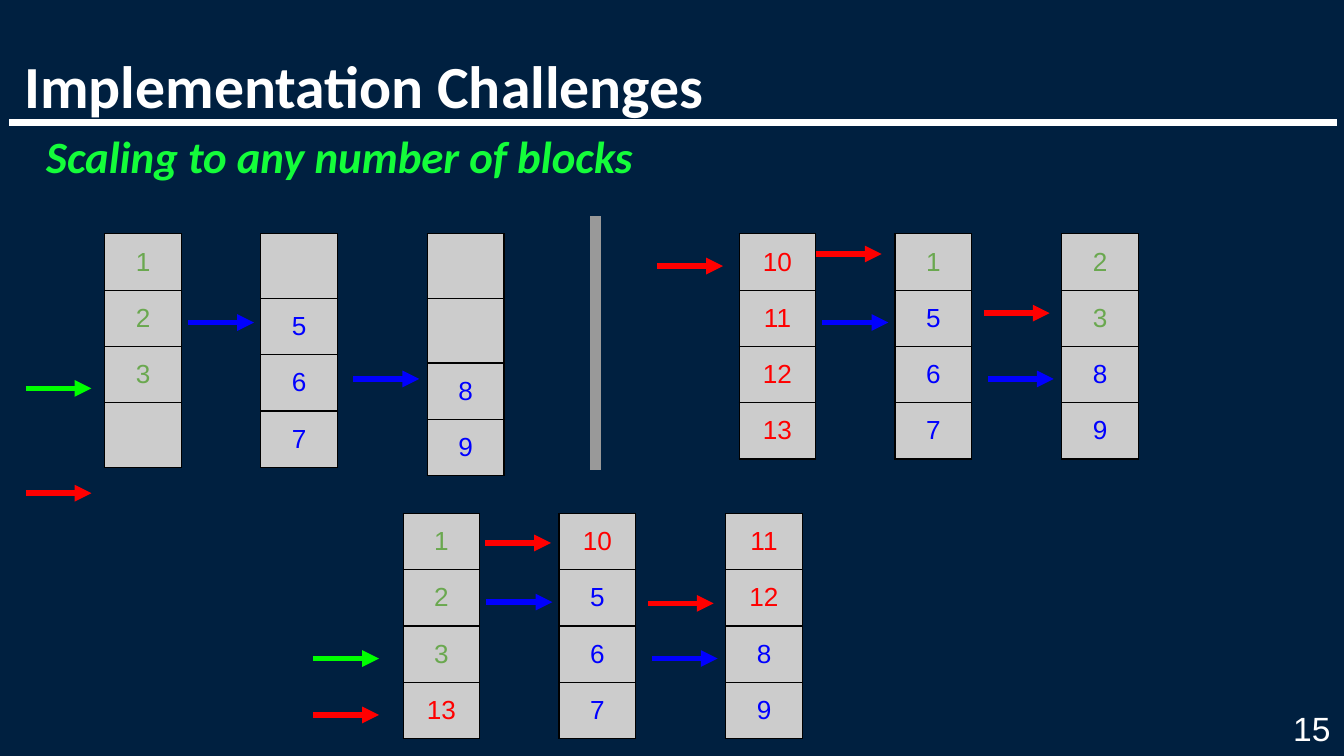
from lxml import etree
from pptx import Presentation
from pptx import util as u
from pptx.dml.color import RGBColor
from pptx.enum import shapes, text
from pptx.oxml import ns, parse_xml

# The slide is a grid of square units: 100 columns by 56.25 rows
UNIT = u.Inches(0.1)
COLUMNS, ROWS = 100, 56.25
COLORS = {"background": "002040", "white": "FFFFFF", "subtitle": "14FD3A",
          "cell": "CCCCCC", "border": "000000", "divider": "999999",
          "green": "00FF00", "blue": "0000FF", "red": "FF0000", "leaf": "6AA84F"}

# Block geometry and arrows shared by every stage, in grid units
BLOCK_OFFSETS = (0, 11.6, 24)
BLOCK_WIDTH, CELL_HEIGHT, ARROW_LENGTH = 5.7, 4.1, 4.9
SHARED_ARROWS = [("blue", 6.2, 6.6), ("blue", 18.5, 10.8)]

# Each stage: origin, three blocks (None is an empty cell), arrows from the origin
STAGES = [
    ((7.8, 17.4), [(1, 2, 3, None), (None, 5, 6, 7), (None, None, 8, 9)],
     [("green", -5.9, 11.5), ("red", -5.9, 19.3)]),
    ((55, 17.4), [(10, 11, 12, 13), (1, 5, 6, 7), (2, 3, 8, 9)],
     [("red", -6.1, 2.4), ("red", 5.7, 1.5), ("red", 18.2, 5.9)]),
    ((30, 38.2), [(1, 2, 3, 13), (10, 5, 6, 7), (11, 12, 8, 9)],
     [("green", -6.7, 10.8), ("red", -6.7, 15), ("red", 6.1, 2.2), ("red", 18.2, 6.7)]),
]


def grid(*lengths):
    return [round(length * UNIT) for length in lengths]


def color(name):
    return RGBColor.from_string(COLORS[name])


def apply(target, values):
    for name, value in values.items():
        setattr(target, name, value)


def write(paragraph, words, color_name, **font_values):
    run = paragraph.add_run()
    run.text = words
    apply(run.font, font_values)
    run.font.color.rgb = color(color_name)


def add_line(slide, start, end, color_name, weight, arrow=False):
    line = slide.shapes.add_connector(
        shapes.MSO_CONNECTOR.STRAIGHT, *grid(*start, *end))
    line.line.color.rgb = color(color_name)
    line.line.width = u.Pt(weight)
    properties = line._element.spPr
    if arrow:
        etree.SubElement(properties.find(ns.qn("a:ln")), ns.qn("a:tailEnd"), type="triangle")
    etree.SubElement(properties, ns.qn("a:effectLst"))


def frame_text(shape, box, margins, anchor):
    apply(shape, dict(zip(("left", "top", "width", "height"), grid(*box))))
    sides = ("margin_left", "margin_top", "margin_right", "margin_bottom")
    apply(shape.text_frame, dict(zip(sides, grid(*margins))))
    apply(shape.text_frame, {"word_wrap": True, "vertical_anchor": anchor,
                             "auto_size": text.MSO_AUTO_SIZE.NONE})
    return shape.text_frame.paragraphs[0]


def add_heading(slide, box):
    left, top, width, height = box
    # Title above the rule
    paragraph = frame_text(slide.shapes.title, box, (1, 0, 1, 0), text.MSO_ANCHOR.BOTTOM)
    apply(paragraph, {"alignment": text.PP_ALIGN.LEFT, "line_spacing": 0.89})
    write(paragraph, "Implementation Challenges", "white",
          name="Calibri", size=u.Pt(32), bold=True)
    rule = top + height + 0.1
    add_line(slide, (left - 0.1, rule), (left + width + 0.4, rule), "white", 3.75)

    # Subtitle with a blank bullet
    subtitle = slide.shapes.add_textbox(0, 0, UNIT, UNIT)
    paragraph = frame_text(subtitle, (left, rule + 0.5, width, 7.8),
                           (1, 0.5, 1, 0.5), text.MSO_ANCHOR.TOP)
    properties = paragraph._p.get_or_add_pPr()
    properties.set("marL", str(u.Inches(0.1)))
    properties.set("indent", str(u.Inches(-0.17)))
    bullet_color = etree.SubElement(properties, ns.qn("a:buClr"))
    etree.SubElement(bullet_color, ns.qn("a:srgbClr"), val=COLORS["subtitle"])
    etree.SubElement(properties, ns.qn("a:buChar"), char=" ")
    paragraph.line_spacing = 0.89
    write(paragraph, "Scaling to any number of blocks", "subtitle",
          name="Calibri", size=u.Pt(24), bold=True, italic=True)


def add_page_number(slide, box):
    number = slide.shapes.add_textbox(0, 0, UNIT, UNIT)
    paragraph = frame_text(number, box, (0, 0, 0, 0), text.MSO_ANCHOR.TOP)
    paragraph.alignment = text.PP_ALIGN.RIGHT
    write(paragraph, "15", "white", name="Arial", size=u.Pt(18))


def value_color(value):
    return "leaf" if value < 4 else "blue" if value < 10 else "red"


def format_cell(cell, value):
    properties = cell._tc.get_or_add_tcPr()
    for side in ("lnL", "lnR", "lnT", "lnB"):
        properties.append(parse_xml(
            f'<a:{side} {ns.nsdecls("a")} w="{u.Pt(0.75)}"><a:solidFill>'
            f'<a:srgbClr val="{COLORS["border"]}"/></a:solidFill></a:{side}>'))
    cell.fill.solid()
    cell.fill.fore_color.rgb = color("cell")
    apply(cell, dict.fromkeys(
        ("margin_left", "margin_top", "margin_right", "margin_bottom"), UNIT))
    paragraph = cell.text_frame.paragraphs[0]
    paragraph.alignment = text.PP_ALIGN.CENTER
    if value is None:
        # Empty cells keep a larger line, so their rows grow taller
        end = etree.SubElement(paragraph._p, ns.qn("a:endParaRPr"), sz="1800")
        etree.SubElement(end, ns.qn("a:latin"), typeface="Arial")
    else:
        write(paragraph, str(value), value_color(value), name="Arial", size=u.Pt(14))


def add_block(slide, left, top, values):
    box = grid(left, top, BLOCK_WIDTH, CELL_HEIGHT * len(values))
    table = slide.shapes.add_table(len(values), 1, *box).table
    apply(table, {"first_row": False, "horz_banding": False})
    for row, value in enumerate(values):
        format_cell(table.cell(row, 0), value)


def add_stage(slide, origin, blocks, arrows):
    left, top = origin
    for offset, values in zip(BLOCK_OFFSETS, blocks):
        add_block(slide, left + offset, top, values)
    for color_name, across, down in SHARED_ARROWS + arrows:
        start = (left + across, top + down)
        end = (start[0] + ARROW_LENGTH, start[1])
        add_line(slide, start, end, color_name, 3, arrow=True)


def main():
    presentation = Presentation()
    presentation.slide_width, presentation.slide_height = grid(COLUMNS, ROWS)
    slide = presentation.slides.add_slide(presentation.slide_layouts[5])
    slide.background.fill.solid()
    slide.background.fill.fore_color.rgb = color("background")

    add_heading(slide, (0.8, 0, 98.3, 9))
    add_page_number(slide, (95.7, 52.7, 3.3, 2.1))
    for stage in STAGES:
        add_stage(slide, *stage)
    # Divider between the two upper stages
    add_line(slide, (44.3, 16.1), (44.3, 35), "divider", 6)
    presentation.save("out.pptx")


if __name__ == "__main__":
    main()
